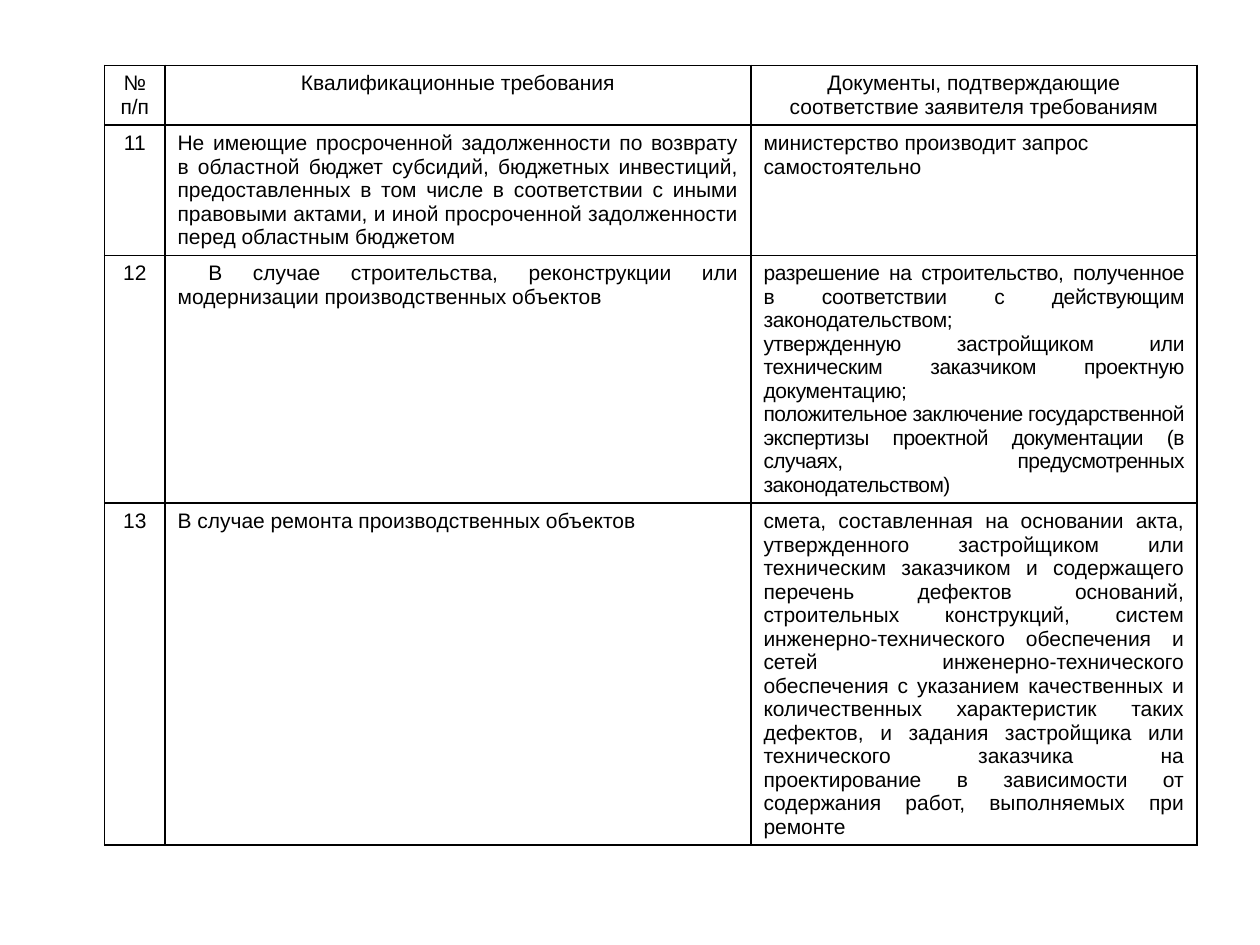
"""Build a slide with a table of qualification requirements and supporting documents."""
from dataclasses import dataclass

from lxml import etree
from pptx import Presentation
from pptx import util as u
from pptx.dml.color import RGBColor
from pptx.enum import text
from pptx.oxml import ns
from pptx.slide import Slide
from pptx.table import _Cell

COLORS = {"ink": "000000", "paper": "FFFFFF"}
FONT_NAME = "Arial"
FONT_SIZE = u.Pt(12)
BORDER_WIDTH = u.Pt(1)
COLUMN_WIDTHS = (34.5, 334.8, 254.9)
ROW_HEIGHT = 29.5
CENTER = text.PP_ALIGN.CENTER
JUSTIFY = text.PP_ALIGN.JUSTIFY
LEFT = text.PP_ALIGN.LEFT


@dataclass(frozen=True)
class CellText:
    """Wording, alignment and letter spacing per paragraph, in points."""
    wording: str
    alignment: text.PP_ALIGN = JUSTIFY
    spacing: tuple[float, ...] = ()


ROWS = (
    (
        CellText("№\nп/п", CENTER),
        CellText("Квалификационные требования", CENTER),
        CellText("Документы, подтверждающие соответствие заявителя требованиям", CENTER),
    ),
    (
        CellText("11", CENTER),
        CellText(
            "Не имеющие просроченной задолженности по возврату в областной бюджет "
            "субсидий, бюджетных инвестиций, предоставленных в том числе в соответствии "
            "с иными правовыми актами, и иной просроченной задолженности перед "
            "областным бюджетом"
        ),
        CellText("министерство производит запрос самостоятельно", LEFT),
    ),
    (
        CellText("12", CENTER),
        CellText(
            " В случае строительства, реконструкции или модернизации "
            "производственных объектов"
        ),
        CellText(
            "разрешение на строительство, полученное в соответствии с действующим "
            "законодательством;\n"
            "утвержденную застройщиком или техническим заказчиком проектную "
            "документацию;\n"
            "положительное заключение государственной экспертизы проектной "
            "документации (в случаях, предусмотренных законодательством)",
            spacing=(-0.2, -0.2, -0.3),
        ),
    ),
    (
        CellText("13", CENTER),
        CellText("В случае ремонта производственных объектов"),
        CellText(
            "смета, составленная на основании акта, утвержденного застройщиком или "
            "техническим заказчиком и содержащего перечень дефектов оснований, "
            "строительных конструкций, систем инженерно-технического обеспечения и "
            "сетей инженерно-технического обеспечения с указанием качественных и "
            "количественных характеристик таких дефектов, и задания застройщика или "
            "технического заказчика на проектирование в зависимости от содержания "
            "работ, выполняемых при ремонте"
        ),
    ),
)


def draw_borders(cell: _Cell) -> None:
    """Outline all four sides of a cell."""
    properties = cell._tc.get_or_add_tcPr()
    for side in ("a:lnL", "a:lnR", "a:lnT", "a:lnB"):
        line = etree.SubElement(properties, ns.qn(side), w=str(int(BORDER_WIDTH)))
        fill = etree.SubElement(line, ns.qn("a:solidFill"))
        etree.SubElement(fill, ns.qn("a:srgbClr"), val=COLORS["ink"])


def fill_cell(cell: _Cell, content: CellText) -> None:
    """Write and format the text of one cell."""
    draw_borders(cell)
    cell.fill.background()
    cell.text_frame.text = content.wording
    for index, paragraph in enumerate(cell.text_frame.paragraphs):
        paragraph.alignment = content.alignment
        for run in paragraph.runs:
            run.font.name = FONT_NAME
            run.font.size = FONT_SIZE
            run.font.bold = False
            run.font.color.rgb = RGBColor.from_string(COLORS["ink"])
            if content.spacing:
                properties = run._r.get_or_add_rPr()
                properties.set("spc", str(round(content.spacing[index] * 100)))


def draw_requirements(slide: Slide) -> None:
    """Add the requirements table, whose rows grow with their text."""
    shape = slide.shapes.add_table(
        len(ROWS), len(COLUMN_WIDTHS), u.Pt(59.8), u.Pt(37.4), u.Pt(624.2), u.Pt(460.8)
    )
    table = shape.table
    table.first_row = False
    table.horz_banding = False
    for column, width in zip(table.columns, COLUMN_WIDTHS):
        column.width = u.Pt(width)
    for row, contents in zip(table.rows, ROWS):
        row.height = u.Pt(ROW_HEIGHT)
        for cell, content in zip(row.cells, contents):
            fill_cell(cell, content)


def main() -> None:
    """Create and save the presentation."""
    presentation = Presentation()
    presentation.slide_width = u.Pt(720)
    presentation.slide_height = u.Pt(540)
    slide = presentation.slides.add_slide(presentation.slide_layouts[6])
    slide.background.fill.solid()
    slide.background.fill.fore_color.rgb = RGBColor.from_string(COLORS["paper"])
    draw_requirements(slide)
    presentation.save("out.pptx")


if __name__ == "__main__":
    main()
